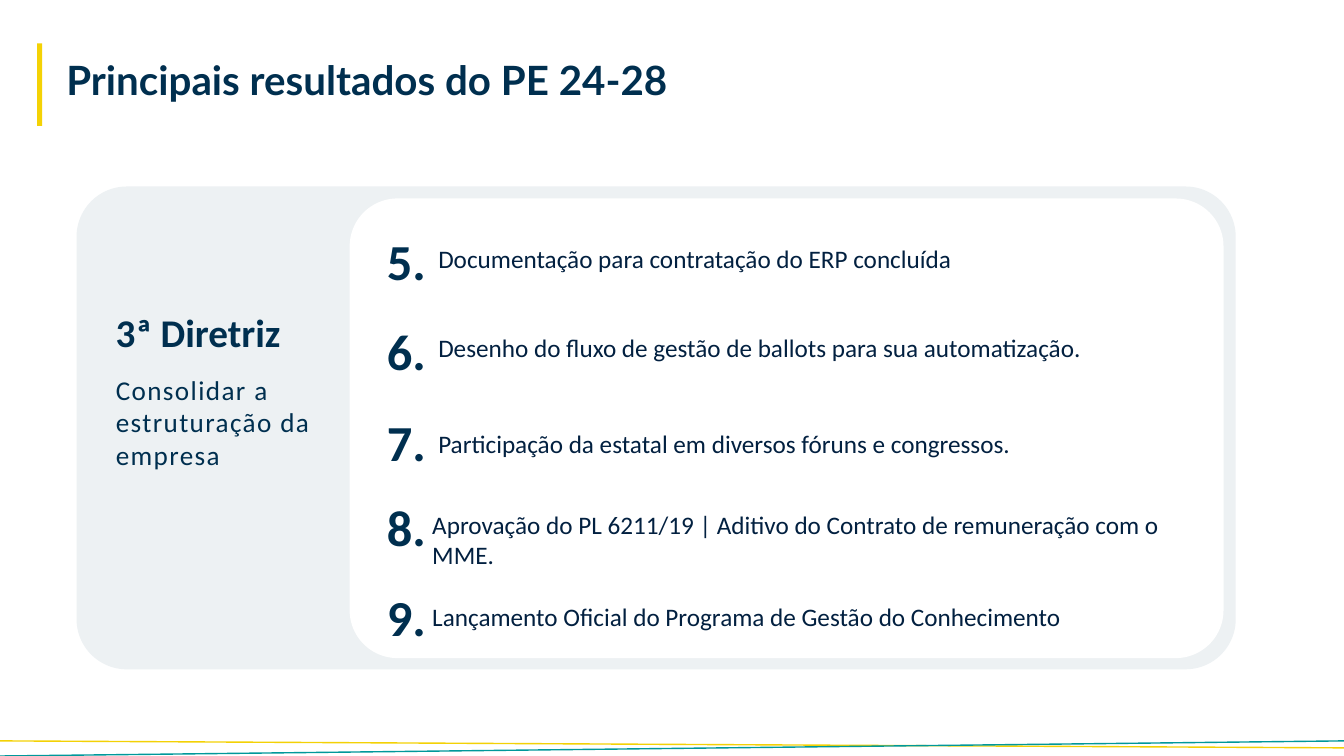
"""Build the slide on the main results of the plan."""
from dataclasses import dataclass

from lxml.etree import SubElement
from pptx import Presentation
from pptx.dml.color import RGBColor
from pptx.enum.shapes import MSO_CONNECTOR, MSO_SHAPE
from pptx.oxml.ns import qn
from pptx.slide import Slide
from pptx.util import Pt


@dataclass(frozen=True)
class Theme:
    """Colours, fonts and type sizes."""
    navy: str = "002F4F"
    ink: str = "022040"
    gold: str = "F4D205"
    amber: str = "F3D105"
    teal: str = "00989A"
    mist: str = "EDF1F3"
    white: str = "FFFFFF"
    head: str = "Lato"
    body: str = "Calibri"
    title: float = 28.8
    label: float = 28
    goal: float = 19.4
    item: float = 18
    digit: float = 36


@dataclass(frozen=True)
class Box:
    """Place and size in points."""
    left: float
    top: float
    width: float
    height: float


@dataclass(frozen=True)
class Block:
    """A filled block, rounded when it has a radius ratio."""
    box: Box
    fill: str
    round: float = 0


@dataclass(frozen=True)
class Line:
    """A footer line across the slide."""
    start: float
    end: float
    color: str


@dataclass(frozen=True)
class Label:
    """A text with its place and style."""
    box: Box
    text: str
    size: float
    color: str
    font: str
    bold: bool = False
    wrap: bool = True
    space: float = 0
    lead: float = 1


@dataclass(frozen=True)
class Result:
    """A numbered result with the places of its two texts."""
    text: str
    top: float
    left: float
    base: float
    height: float = 28.8


LOOK = Theme()
WIDTH, HEIGHT = 960, 540
FIRST = 5

BLOCKS = [
    Block(Box(26.6, 31, 3.6, 59), LOOK.gold),
    Block(Box(54.7, 133.2, 828, 344.9), LOOK.mist, 0.104),
    Block(Box(249.8, 141.8, 624.2, 328.3), LOOK.white, 0.104),
]
LINES = [Line(534.2, 529.2, LOOK.amber), Line(529.2, 540, LOOK.teal)]
LABELS = [
    Label(Box(40.3, 39.6, 716.4, 50.4), "Principais resultados do PE 24-28",
          LOOK.title, LOOK.navy, LOOK.head, bold=True, lead=0.9),
    Label(Box(75.6, 216.7, 133.9, 41), "3ª Diretriz",
          LOOK.label, LOOK.navy, LOOK.body, bold=True, wrap=False),
    Label(Box(75.6, 262.8, 166.3, 77.8), "Consolidar a estruturação da empresa",
          LOOK.goal, LOOK.navy, LOOK.body, space=1),
]
RESULTS = [
    Result("Documentação para contratação do ERP concluída", 160.6, 306, 170.6),
    Result("Desenho do fluxo de gestão de ballots para sua automatização.",
           225.4, 306, 234),
    Result("Participação da estatal em diversos fóruns e congressos.",
           290.2, 306, 302.4),
    Result("Aprovação do PL 6211/19 | Aditivo do Contrato de remuneração com o MME.",
           350.6, 301.7, 360, 51.1),
    Result("Lançamento Oficial do Programa de Gestão do Conhecimento",
           415.4, 301.7, 426.2),
]


def place(box: Box) -> tuple[Pt, Pt, Pt, Pt]:
    """Return the box as lengths."""
    return Pt(box.left), Pt(box.top), Pt(box.width), Pt(box.height)


def draw_block(slide: Slide, block: Block) -> None:
    """Draw a filled block without outline."""
    kind = MSO_SHAPE.ROUNDED_RECTANGLE if block.round else MSO_SHAPE.RECTANGLE
    shape = slide.shapes.add_shape(kind, *place(block.box))
    if block.round:
        shape.adjustments[0] = block.round
    shape.shadow.inherit = False
    shape.fill.solid()
    shape.fill.fore_color.rgb = RGBColor.from_string(block.fill)
    shape.line.fill.background()


def draw_line(slide: Slide, line: Line) -> None:
    """Draw a thin line from the right edge to the left edge."""
    link = slide.shapes.add_connector(
        MSO_CONNECTOR.STRAIGHT, Pt(WIDTH), Pt(line.start), Pt(0), Pt(line.end))
    link.line.color.rgb = RGBColor.from_string(line.color)
    link.line.width = Pt(1)
    SubElement(link.element.spPr, qn("a:effectLst"))


def draw_label(slide: Slide, label: Label) -> None:
    """Draw a text box with one styled paragraph."""
    frame = slide.shapes.add_textbox(*place(label.box)).text_frame
    frame.word_wrap = label.wrap
    frame.text = label.text
    para = frame.paragraphs[0]
    para.line_spacing = label.lead
    run = para.runs[0]
    run.font.size = Pt(label.size)
    run.font.name = label.font
    run.font.bold = label.bold
    run.font.color.rgb = RGBColor.from_string(label.color)
    if label.space:
        run.font.element.set("spc", str(round(label.space * 100))) if hasattr(
            run.font, "element") else run._r.get_or_add_rPr().set(
            "spc", str(round(label.space * 100)))


def draw_result(slide: Slide, count: int, item: Result) -> None:
    """Draw the number of a result and its text."""
    draw_label(slide, Label(Box(item.left, item.base, 549.4, item.height),
                            item.text, LOOK.item, LOOK.ink, LOOK.body))
    draw_label(slide, Label(Box(269.3, item.top, 42.5, 51.1), f"{count}.",
                            LOOK.digit, LOOK.navy, LOOK.body,
                            bold=True, wrap=False))


def main() -> None:
    """Build and save the slide."""
    deck = Presentation()
    deck.slide_width, deck.slide_height = Pt(WIDTH), Pt(HEIGHT)
    slide = deck.slides.add_slide(deck.slide_layouts[6])
    for block in BLOCKS:
        draw_block(slide, block)
    for line in LINES:
        draw_line(slide, line)
    for label in LABELS:
        draw_label(slide, label)
    for count, item in enumerate(RESULTS, FIRST):
        draw_result(slide, count, item)
    deck.save("out.pptx")


if __name__ == "__main__":
    main()
